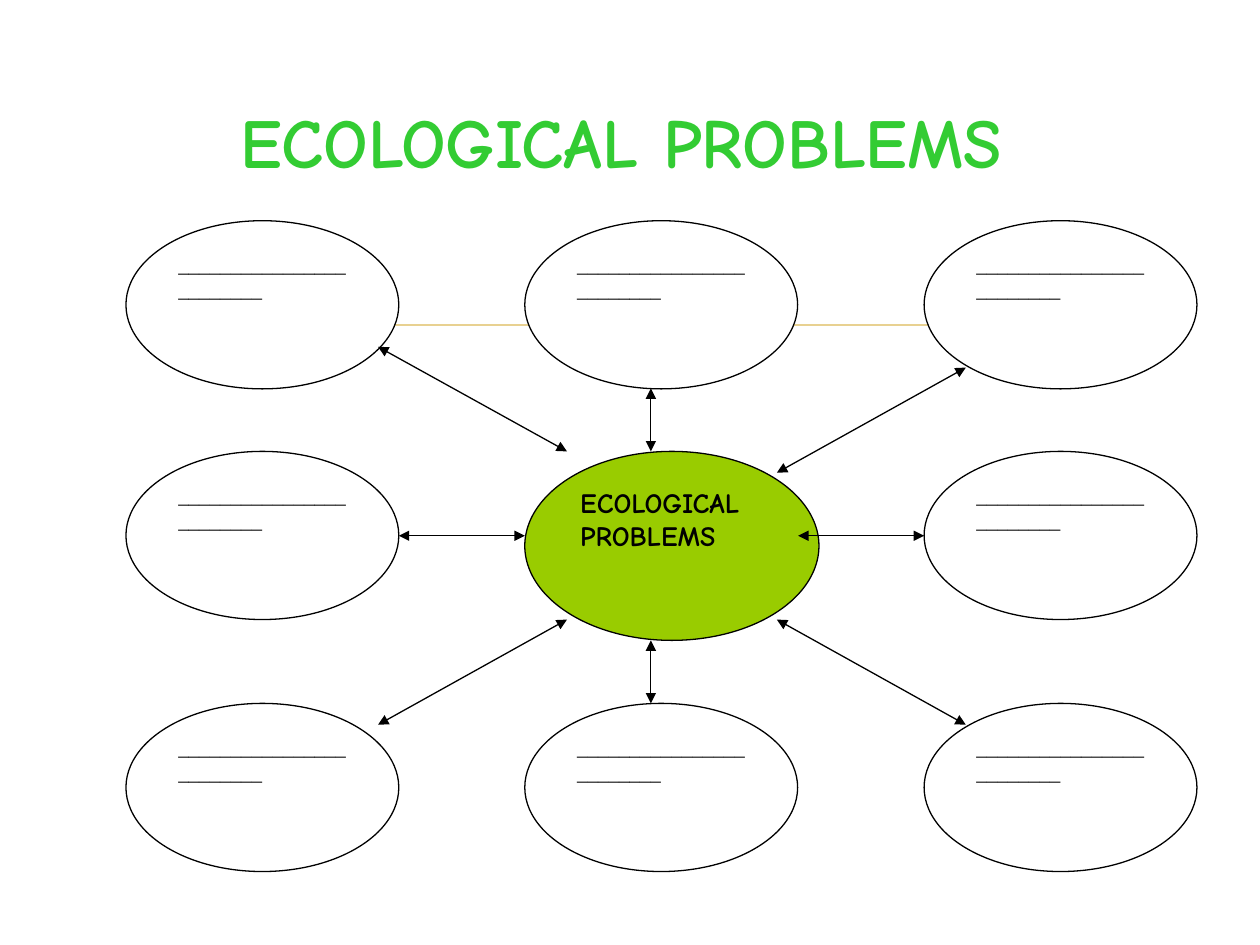
from itertools import product

from lxml.etree import SubElement
from pptx import Presentation
from pptx.dml.color import RGBColor
from pptx.enum.shapes import MSO_CONNECTOR, MSO_SHAPE
from pptx.enum.text import MSO_ANCHOR, PP_ALIGN
from pptx.oxml.ns import qn
from pptx.util import Cm, Pt

COLOURS = {
    "title": "33CC33",
    "rule": "E8D191",
    "ink": "000000",
    "bubble": "FFFFFF",
    "centre": "99CC00",
}
TOPIC = "ECOLOGICAL PROBLEMS"
BLANK_ANSWER = "_" * 24
DISPLAY_FONT = "Comic Neue"
ANSWER_FONT = "Times New Roman"


class MindMap:
    """Draws styled elements on the current slide."""

    def __init__(self, slide):
        self.slide = slide

    def colour(self, name):
        return RGBColor.from_string(COLOURS[name])

    def set_text(self, frame, text, font, size, colour, bold, align):
        frame.word_wrap = True
        paragraph = frame.paragraphs[0]
        paragraph.text = text
        paragraph.alignment = align
        paragraph.font.name = font
        paragraph.font.size = Pt(size)
        paragraph.font.bold = bold
        paragraph.font.color.rgb = self.colour(colour)

    def title(self, left, top, width, height, text):
        box = self.slide.shapes.add_textbox(Cm(left), Cm(top), Cm(width), Cm(height))
        box.text_frame.vertical_anchor = MSO_ANCHOR.MIDDLE
        self.set_text(box.text_frame, text, DISPLAY_FONT, 40, "title", True, PP_ALIGN.CENTER)

    def bubble(self, left, top, width, height, text, fill, font, size, bold=False):
        shape = self.slide.shapes.add_shape(
            MSO_SHAPE.OVAL, Cm(left), Cm(top), Cm(width), Cm(height))
        shape.shadow.inherit = False
        shape.fill.solid()
        shape.fill.fore_color.rgb = self.colour(fill)
        shape.line.color.rgb = self.colour("ink")
        shape.line.width = Pt(0.75)
        shape.text_frame.vertical_anchor = MSO_ANCHOR.TOP
        self.set_text(shape.text_frame, text, font, size, "ink", bold, PP_ALIGN.LEFT)

    def line(self, start, end, colour, width):
        connector = self.slide.shapes.add_connector(
            MSO_CONNECTOR.STRAIGHT, *(Cm(value) for value in (*start, *end)))
        connector.line.color.rgb = self.colour(colour)
        connector.line.width = Pt(width)
        SubElement(connector._element.spPr, qn("a:effectLst"))
        return connector

    def double_arrow(self, start, end):
        connector = self.line(start, end, "ink", 0.75)
        outline = connector._element.spPr.find(qn("a:ln"))
        for tag in ("a:headEnd", "a:tailEnd"):
            SubElement(outline, qn(tag), type="triangle")


def main():
    presentation = Presentation()
    presentation.slide_width, presentation.slide_height = Cm(25.4), Cm(19.05)
    slide = presentation.slides.add_slide(presentation.slide_layouts[6])
    mind_map = MindMap(slide)

    # Rule behind the bubbles, and the title
    mind_map.line((3.56, 6.55), (21.87, 6.55), "rule", 1.25)
    mind_map.title(3.07, 1.02, 18.9, 3.63, TOPIC)

    # Ring of answer bubbles around the topic
    columns = (2.54, 10.58, 18.63)
    rows = (4.45, 9.1, 14.18)
    centre = (columns[1], rows[1])
    for left, top in product(columns, rows):
        if (left, top) != centre:
            mind_map.bubble(left, top, 5.5, 3.39, BLANK_ANSWER, "bubble", ANSWER_FONT, 12)
    mind_map.bubble(*centre, 5.93, 3.81, TOPIC, "centre", DISPLAY_FONT, 16, bold=True)

    # Arrows between the topic and each answer
    arrows = (
        ((15.66, 9.53), (19.47, 7.41)),    # top right
        ((16.09, 10.8), (18.63, 10.8)),    # right
        ((15.66, 12.49), (19.47, 14.61)),  # bottom right
        ((13.12, 12.91), (13.12, 14.18)),  # bottom
        ((7.62, 14.61), (11.43, 12.49)),   # bottom left
        ((8.04, 10.8), (10.58, 10.8)),     # left
        ((7.62, 6.99), (11.43, 9.1)),      # top left
        ((13.12, 7.83), (13.12, 9.1)),     # top
    )
    for start, end in arrows:
        mind_map.double_arrow(start, end)

    presentation.save("out.pptx")


if __name__ == "__main__":
    main()
